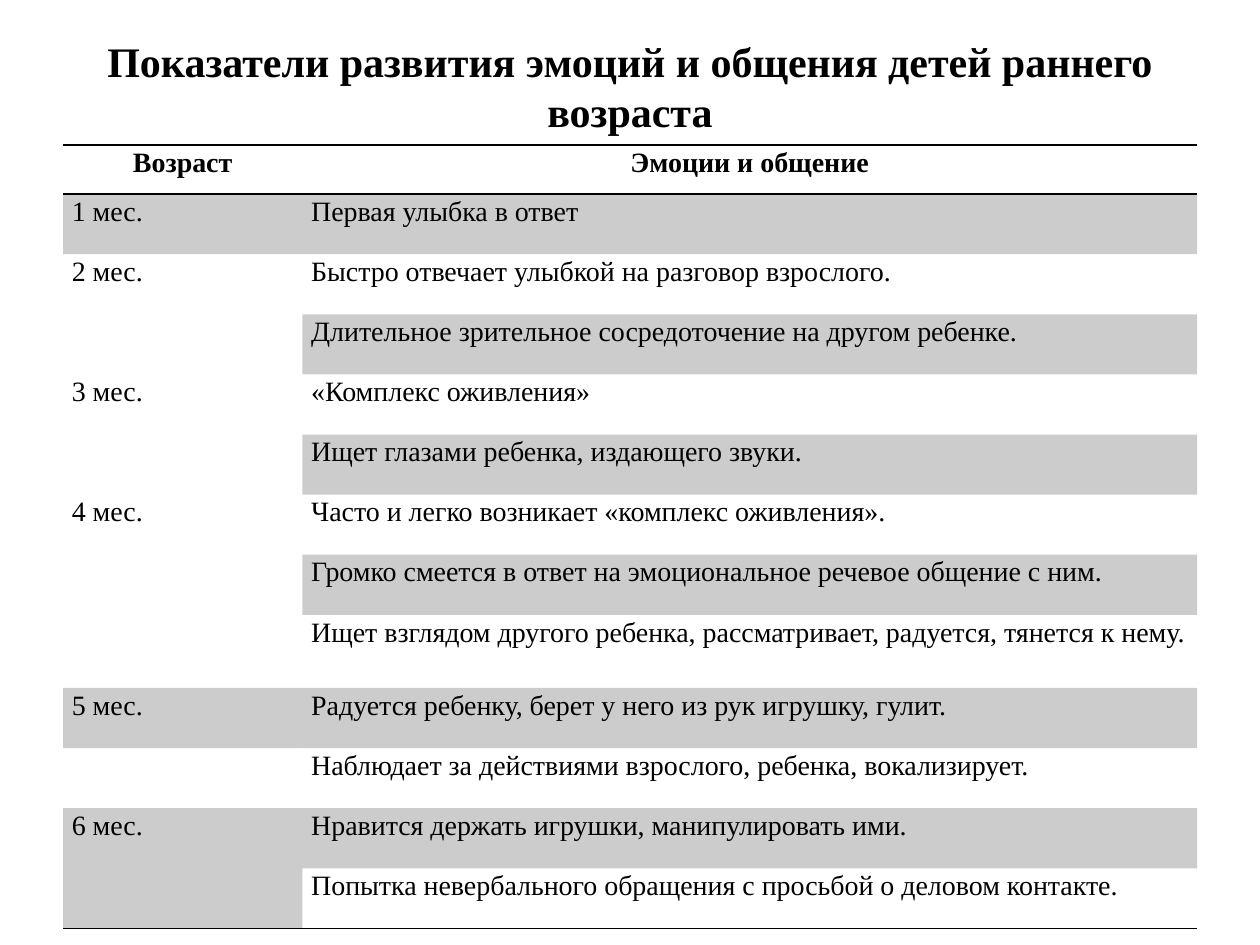
from lxml import etree
from pptx import Presentation
from pptx.dml.color import RGBColor
from pptx.enum.text import MSO_ANCHOR, PP_ALIGN
from pptx.oxml.ns import qn
from pptx.util import Inches, Pt

CENTER = PP_ALIGN.CENTER
LEFT = PP_ALIGN.LEFT
MIDDLE = MSO_ANCHOR.MIDDLE
FONT = "Times New Roman"
COLORS = {"text": "000000", "line": "000000", "band": "000000"}
BAND_ALPHA = 20
NO_STYLE = "{2D5ABB26-0587-4C30-8999-92F81FD0307C}"

TITLE = "Показатели развития эмоций и общения детей раннего возраста"
HEADER = ("Возраст", "Эмоции и общение")
COL_WIDTHS = (1.9, 7.1)
TABLE_HEIGHT, HEADER_HEIGHT, TALL_HEIGHT = 6.22, 0.39, 0.58
TALL_ROW = 8

# Age, whether its cell is merged over all its signs, and the signs
AGES = [
    ("1 мес.", False, ["Первая улыбка в ответ"]),
    ("2 мес.", True, [
        "Быстро отвечает улыбкой на разговор взрослого.",
        "Длительное зрительное сосредоточение на другом ребенке."]),
    ("3 мес.", True, [
        "«Комплекс оживления»",
        "Ищет глазами ребенка, издающего звуки."]),
    ("4 мес.", True, [
        "Часто и легко возникает «комплекс оживления».",
        "Громко смеется в ответ на эмоциональное речевое общение с ним.",
        "Ищет взглядом другого ребенка, рассматривает, радуется, тянется к нему."]),
    ("5 мес.", False, [
        "Радуется ребенку, берет у него из рук игрушку, гулит.",
        "Наблюдает за действиями взрослого, ребенка, вокализирует."]),
    ("6 мес.", True, [
        "Нравится держать игрушки, манипулировать ими.",
        "Попытка невербального обращения с просьбой о деловом контакте."]),
]


def write(tf, text, size, bold=False, align=LEFT):
    tf.text = text
    p = tf.paragraphs[0]
    p.alignment = align
    for r in p.runs:
        r.font.name = FONT
        r.font.size = Pt(size)
        r.font.bold = bold
        r.font.color.rgb = RGBColor.from_string(COLORS["text"])
    return p


def add_title(slide):
    sp = slide.shapes.add_textbox(Inches(0.5), Inches(0.13), Inches(9), Inches(1.1))
    tf = sp.text_frame
    tf.word_wrap = True
    tf.vertical_anchor = MIDDLE
    write(tf, TITLE, 24, True, CENTER)


def write_cell(cell, text, bold=False, align=LEFT):
    cell.margin_left = cell.margin_right = Inches(0.07)
    cell.margin_top = cell.margin_bottom = 0
    p = write(cell.text_frame, text, 16, bold, align)
    p.line_spacing = 1.07


def shade(cell):
    """Fill the cell with the translucent band colour."""
    cell.fill.solid()
    cell.fill.fore_color.rgb = RGBColor.from_string(COLORS["band"])
    clr = cell._tc.tcPr.find(qn("a:solidFill")).find(qn("a:srgbClr"))
    etree.SubElement(clr, qn("a:alpha"), val=str(BAND_ALPHA * 1000))


def add_borders(cell, *sides):
    """Draw the given sides ("T", "B"), which must come in schema order."""
    tcPr = cell._tc.get_or_add_tcPr()
    for i, side in enumerate(sides):
        ln = etree.Element(qn(f"a:ln{side}"), w=str(Pt(1)))
        fill = etree.SubElement(ln, qn("a:solidFill"))
        etree.SubElement(fill, qn("a:srgbClr"), val=COLORS["line"])
        tcPr.insert(i, ln)


def add_table(slide):
    n_rows = 1 + sum(len(signs) for _, _, signs in AGES)
    row_height = (TABLE_HEIGHT - HEADER_HEIGHT - TALL_HEIGHT) / (n_rows - 2)
    heights = [HEADER_HEIGHT] + [row_height] * (n_rows - 1)
    heights[TALL_ROW] = TALL_HEIGHT
    frame = slide.shapes.add_table(n_rows, 2, Inches(0.5), Inches(1.15),
                                   Inches(sum(COL_WIDTHS)), Inches(TABLE_HEIGHT))
    table = frame.table
    table.horz_banding = False
    table._tbl.tblPr.find(qn("a:tableStyleId")).text = NO_STYLE
    for column, width in zip(table.columns, COL_WIDTHS):
        column.width = Inches(width)
    for row, height in zip(table.rows, heights):
        row.height = Inches(height)

    for col, text in enumerate(HEADER):
        write_cell(table.cell(0, col), text, True, CENTER)
        add_borders(table.cell(0, col), "T", "B")
        add_borders(table.cell(n_rows - 1, col), "B")

    row = 1
    for age, merged, signs in AGES:
        age_cell = table.cell(row, 0)
        write_cell(age_cell, age)
        if row % 2:
            shade(age_cell)
        if merged:
            age_cell.merge(table.cell(row + len(signs) - 1, 0))
            if row + len(signs) == n_rows:
                add_borders(age_cell, "B")
        for sign in signs:
            cell = table.cell(row, 1)
            write_cell(cell, sign)
            if row % 2:
                shade(cell)
            row += 1


def main():
    prs = Presentation()
    prs.slide_width, prs.slide_height = Inches(10), Inches(7.5)
    slide = prs.slides.add_slide(prs.slide_layouts[6])
    add_title(slide)
    add_table(slide)
    prs.save("out.pptx")


if __name__ == "__main__":
    main()
